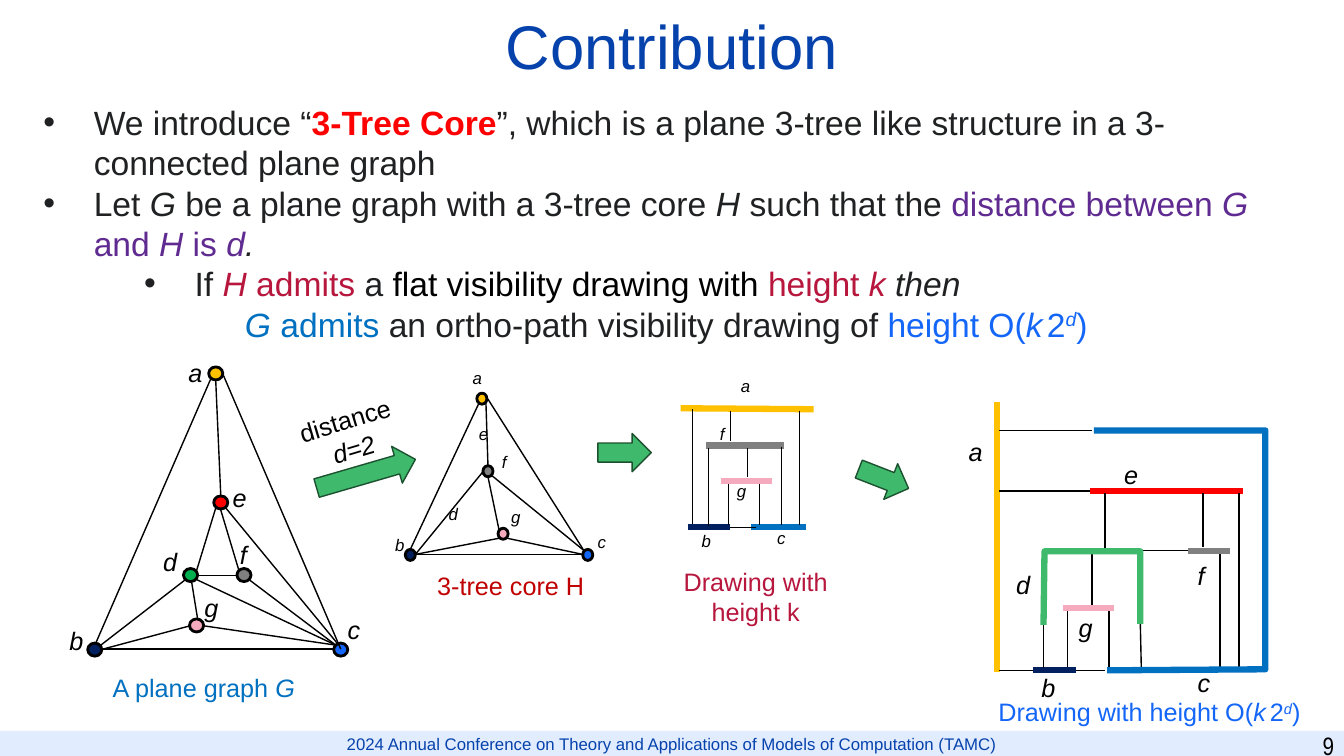
from dataclasses import dataclass
from typing import NamedTuple

from lxml.etree import SubElement
from pptx import Presentation
from pptx.dml.color import RGBColor
from pptx.enum.shapes import MSO_CONNECTOR as Connector, MSO_SHAPE as Preset
from pptx.enum.text import MSO_ANCHOR as Anchor, MSO_AUTO_SIZE as AutoSize, PP_ALIGN as Align
from pptx.oxml.ns import qn
from pptx.util import Inches, Pt

# Grid: square cells, one inch a side
COLUMNS, ROWS = 13.33, 7.5
CELL = Inches(1)

COLOURS = {
    "black": "000000", "ink": "202122", "title": "0642AC", "band": "E1ECFE",
    "a": "FFC000", "b": "002060", "c": "1366F7", "d": "00B050", "e": "FF0000",
    "f": "808080", "g": "F5AABD", "path c": "0070C0", "path d": "3FB96C",
    "arrow edge": "1C512F", "purple": "602B91", "crimson": "B7163D", "core": "C00000",
}


class Box(NamedTuple):
    left: float
    top: float
    width: float
    height: float


class Line(NamedTuple):
    x1: float
    y1: float
    x2: float
    y2: float
    colour: str = "black"
    weight: float = 1


class Node(NamedTuple):
    name: str
    left: float
    top: float


class Label(NamedTuple):
    text: str
    left: float
    top: float


@dataclass
class Run:
    text: str
    colour: str = "ink"
    italic: bool = False
    bold: bool = False
    size: float = 0
    raised: bool = False


@dataclass
class Bullet:
    runs: list
    level: int
    margin: float
    indent: float


def cells(*lengths: float) -> list:
    return [round(length * CELL) for length in lengths]


def rgb(name: str) -> RGBColor:
    return RGBColor.from_string(COLOURS[name])


def level(y: float, left: float, right: float, colour="black", weight=1.0) -> Line:
    return Line(left, y, right, y, colour, weight)


def upright(x: float, top: float, bottom: float, colour="black", weight=1.0) -> Line:
    return Line(x, top, x, bottom, colour, weight)


def write(paragraph, runs: list, size: float) -> None:
    for part in runs:
        run = paragraph.add_run()
        run.text = part.text
        values = {"name": "Arial", "size": Pt(part.size or size),
                  "bold": part.bold, "italic": part.italic}
        for attribute, value in values.items():
            setattr(run.font, attribute, value)
        run.font.color.rgb = rgb(part.colour)
        if part.raised:
            run.font._element.set("baseline", "30000")


def add_text(slide, box: Box, runs: list, size: float, align=Align.LEFT, rotation=0.0):
    shape = slide.shapes.add_textbox(*cells(*box))
    shape.rotation = rotation
    shape.text_frame.word_wrap = True
    paragraph = shape.text_frame.paragraphs[0]
    paragraph.alignment = align
    write(paragraph, runs, size)
    return shape


def add_preset(slide, preset, box: Box, fill: str, edge="", weight=1.0, rotation=0.0):
    shape = slide.shapes.add_shape(preset, *cells(*box))
    shape.shadow.inherit = False
    shape.rotation = rotation
    shape.fill.solid()
    shape.fill.fore_color.rgb = rgb(fill)
    if edge:
        shape.line.color.rgb, shape.line.width = rgb(edge), Pt(weight)
    else:
        shape.line.fill.background()
    return shape


def add_line(slide, line: Line) -> None:
    ends = cells(line.x1, line.y1, line.x2, line.y2)
    shape = slide.shapes.add_connector(Connector.STRAIGHT, *ends)
    shape.line.color.rgb, shape.line.width = rgb(line.colour), Pt(line.weight)
    SubElement(shape._element.spPr, qn("a:effectLst"))


def add_path(slide, points: list, colour: str) -> None:
    start, *rest = [tuple(cells(*point)) for point in points]
    builder = slide.shapes.build_freeform(*start)
    builder.add_line_segments(rest, close=False)
    shape = builder.convert_to_shape()
    shape.shadow.inherit = False
    shape.fill.background()
    shape.line.color.rgb, shape.line.width = rgb(colour), Pt(4.5)


def add_bullet(paragraph, bullet: Bullet) -> None:
    paragraph.level, paragraph.space_before = bullet.level, Pt(0)
    properties = paragraph._p.get_or_add_pPr()
    for name, length in {"marL": bullet.margin, "indent": bullet.indent}.items():
        properties.set(name, str(Inches(length)))
    if bullet.indent:
        SubElement(properties, qn("a:buFont"), typeface="Arial")
        SubElement(properties, qn("a:buChar"), char="•")
    else:
        SubElement(properties, qn("a:buNone"))
    write(paragraph, bullet.runs, 24)


def height_formula(gap: float) -> list:
    return [Run("k", "c", True), Run(" ", "c", size=gap), Run("2", "c"),
            Run("d", "c", True, raised=True), Run(")", "c")]


BULLETS = [
    Bullet([Run("We introduce “"), Run("3-Tree Core", "e", bold=True),
            Run("”, which is a plane 3-tree like structure in a 3-connected plane graph")],
           0, 0.5, -0.5),
    Bullet([Run("Let "), Run("G ", italic=True), Run("be a plane graph with a 3-tree core "),
            Run("H ", italic=True), Run("such that the "), Run("distance between ", "purple"),
            Run("G", "purple", True), Run(" and ", "purple"), Run("H", "purple", True),
            Run(" is ", "purple"), Run("d", "purple", True), Run(".", italic=True)], 0, 0.5, -0.5),
    Bullet([Run("If "), Run("H ", "crimson", True), Run("admits ", "crimson"), Run("a "),
            Run("flat visibility drawing with ", "black"), Run("height ", "crimson"),
            Run("k ", "crimson", True), Run("then", italic=True)], 1, 1.5, -0.5),
    Bullet([Run("G ", "path c", True), Run("admits ", "path c"),
            Run("an ortho-path visibility drawing of"), Run(" ", italic=True),
            Run("height O(", "c"), *height_formula(11)], 1, 2, 0),
]

# Plane graph G and its 3-tree core H
GRAPH_NODES = [Node("a", 2.07, 3.64), Node("d", 1.82, 5.64), Node("e", 2.12, 4.92),
               Node("f", 2.35, 5.64), Node("g", 1.88, 6.14), Node("b", 0.87, 6.38),
               Node("c", 3.31, 6.38)]
CORE_NODES = [Node("a", 4.73, 3.9), Node("f", 4.79, 4.62), Node("b", 4.02, 5.45),
              Node("c", 5.78, 5.45), Node("g", 4.94, 5.24)]
EDGES = [
    Line(0.95, 6.38, 2.09, 3.76), Line(3.38, 6.44, 2.21, 3.71), Line(3.31, 6.44, 1.02, 6.44),
    Line(2.19, 4.92, 2.14, 3.78), Line(3.36, 6.4, 2.24, 5.04), Line(1.95, 5.66, 2.14, 5.04),
    Line(3.33, 6.4, 1.95, 5.75), Line(2.37, 5.66, 2.19, 5.06), Line(2.35, 5.71, 1.97, 5.71),
    Line(3.33, 6.4, 2.47, 5.75), Line(1, 6.4, 1.84, 5.75), Line(1.96, 6.14, 1.9, 5.77),
    Line(3.33, 6.4, 2.03, 6.21), Line(1.88, 6.21, 1.02, 6.44),
    Line(4.07, 5.45, 4.75, 4), Line(5.79, 5.46, 4.84, 3.96), Line(5.78, 5.5, 4.12, 5.5),
    Line(4.84, 4.62, 4.82, 4), Line(4.79, 4.68, 4.12, 5.5), Line(5.79, 5.46, 4.88, 4.72),
    Line(5.78, 5.5, 5.03, 5.34), Line(4.95, 5.26, 4.84, 4.73), Line(4.95, 5.34, 4.12, 5.5),
]

# Visibility drawings of H and G: thick bars and thin sight lines
BARS = [
    Line(6.75, 4.05, 8.07, 4.06, "a", 4.5), level(5.23, 6.82, 7.24, "b", 4.5),
    level(4.77, 7.15, 7.66, "g", 4.5), level(4.42, 7, 7.78, "f", 4.5),
    level(5.23, 7.45, 7.99, "path c", 4.5), upright(9.89, 3.99, 6.67, "a", 4.5),
    level(6.65, 10.25, 10.67, "b", 4.5), level(5.47, 11.78, 12.2, "f", 4.5),
    level(4.87, 10.81, 12.33, "e", 4.5), level(6.03, 10.54, 11.05, "g", 4.5),
]
CORE_SIGHTS = [(7.03, 4.44, 5.22), (7.75, 4.43, 5.21), (7.53, 4.8, 5.21), (7.22, 4.8, 5.21),
               (7.41, 4.44, 4.73), (7.24, 4.08, 4.38), (6.87, 4.06, 5.2), (7.93, 4.08, 5.21)]
GRAPH_SIGHTS = [(10.96, 4.89, 5.44), (11.93, 4.89, 5.43), (12.29, 4.89, 6.62), (10.83, 5.5, 6),
                (10.35, 6.2, 6.63), (10.59, 6.06, 6.62), (11, 6.06, 6.62), (12.1, 5.5, 6.62)]
LEVEL_SIGHTS = [(4.87, 9.91, 10.81), (4.27, 9.91, 10.83), (6.65, 10.67, 10.96),
                (6.65, 9.91, 10.25), (5.46, 11.34, 11.78)]
SIGHTS = [*(upright(*sight, weight=0.5) for sight in CORE_SIGHTS),
          level(5.23, 7.24, 7.5, weight=0.5), Line(11.32, 6.63, 11.31, 6.19),
          *(upright(*sight) for sight in GRAPH_SIGHTS), *(level(*sight) for sight in LEVEL_SIGHTS)]
PATHS = {"path d": [(10.35, 6.2), (10.36, 5.47), (11.31, 5.47), (11.31, 6.19)],
         "path c": [(10.85, 4.27), (12.55, 4.27), (12.55, 6.64), (10.98, 6.65)]}

# Vertex names by text size, arrows and captions
LABELS = {
    18: [Label("a", 1.77, 3.5), Label("a", 9.51, 4.28), Label("b", 0.59, 6.15),
         Label("b", 10.23, 6.62), Label("c", 3.35, 6.05), Label("c", 11.78, 6.57),
         Label("d", 1.52, 5.37), Label("d", 9.98, 5.6), Label("e", 11.05, 4.51),
         Label("e", 2.21, 4.74), Label("f", 2.28, 5.3), Label("f", 11.78, 5.51),
         Label("g", 10.6, 6.03), Label("g", 1.93, 5.83)],
    12: [Label("a", 4.59, 3.6), Label("b", 3.82, 5.26), Label("d", 4.35, 4.95),
         Label("e", 4.65, 4.15), Label("f", 4.88, 4.43), Label("g", 4.97, 4.98),
         Label("c", 5.83, 5.23), Label("c", 7.61, 5.19), Label("b", 6.86, 5.22),
         Label("f", 7.04, 4.15), Label("g", 7.21, 4.72), Label("a", 7.25, 3.68)],
}
LABEL_SIZES = {18: (0.33, 0.4), 12: (0.28, 0.3)}
ARROWS = [(Box(3.12, 4.51, 1.02, 0.38), 343.8), (Box(5.93, 4.3, 0.53, 0.38), 0),
          (Box(8.5, 4.56, 0.53, 0.38), 21.3)]
CAPTIONS = [
    (Box(1.02, 6.62, 2.27, 0.4), [Run("A plane graph ", "path c"), Run("G", "path c", True)],
     Align.LEFT, 0),
    (Box(4.12, 5.61, 1.89, 0.4), [Run("3-tree core H", "core")], Align.CENTER, 0),
    (Box(6.62, 5.57, 1.75, 0.71), [Run("Drawing with height k", "crimson")], Align.CENTER, 0),
    (Box(9.66, 6.86, 3.48, 0.4), [Run("Drawing with height O(", "c"), *height_formula(10)],
     Align.CENTER, 0),
    (Box(2.68, 3.96, 1.57, 0.71), [Run("distance ", "black"), Run("d=2", "black", True)],
     Align.CENTER, 343.3),
]


def place(shape, box: Box, anchor):
    for name, length in zip(Box._fields, cells(*box)):
        setattr(shape, name, length)
    values = {"word_wrap": True, "auto_size": AutoSize.NONE, "vertical_anchor": anchor}
    for attribute, value in values.items():
        setattr(shape.text_frame, attribute, value)
    return shape.text_frame


def main() -> None:
    presentation = Presentation()
    presentation.slide_width, presentation.slide_height = cells(COLUMNS, ROWS)
    slide = presentation.slides.add_slide(presentation.slide_layouts[1])
    # Title and body
    title = place(slide.shapes.title, Box(0, 0.07, COLUMNS, 0.84), Anchor.MIDDLE).paragraphs[0]
    title.alignment, title.line_spacing = Align.CENTER, 0.9
    write(title, [Run("Contribution", "title")], 44)
    body = place(slide.placeholders[1], Box(0.33, 0.96, 12.22, 3.33), Anchor.TOP)
    for index, bullet in enumerate(BULLETS):
        add_bullet(body.add_paragraph() if index else body.paragraphs[0], bullet)
    # Footer band and page number
    band = add_preset(slide, Preset.RECTANGLE, Box(0, 7.25, COLUMNS, 0.25), "band")
    footer = band.text_frame.paragraphs[0]
    footer.alignment = Align.CENTER
    write(footer, [Run("2024 Annual Conference on Theory and Applications of "
                       "Models of Computation (TAMC)", "title")], 12)
    number = add_text(slide, Box(10.83, 7.2, 2.5, 0.72), [Run("9", "black")], 18, Align.RIGHT)
    number.text_frame.paragraphs[0].runs[0].font.name = "Arial Narrow"
    # Figures
    for nodes, size in ((GRAPH_NODES, (0.14, 0.13)), (CORE_NODES, (0.1, 0.11))):
        for node in nodes:
            add_preset(slide, Preset.OVAL, Box(node.left, node.top, *size), node.name, "black", 2)
    for line in EDGES + BARS + SIGHTS:
        add_line(slide, line)
    for colour, points in PATHS.items():
        add_path(slide, points, colour)
    for box, rotation in ARROWS:
        add_preset(slide, Preset.RIGHT_ARROW, box, "path d", "arrow edge", rotation=rotation)
    # Vertex names and captions
    for size, labels in LABELS.items():
        for label in labels:
            box = Box(label.left, label.top, *LABEL_SIZES[size])
            add_text(slide, box, [Run(label.text, "black", True)], size)
    for box, runs, align, rotation in CAPTIONS:
        add_text(slide, box, runs, 18, align, rotation)
    presentation.save("out.pptx")


if __name__ == "__main__":
    main()
